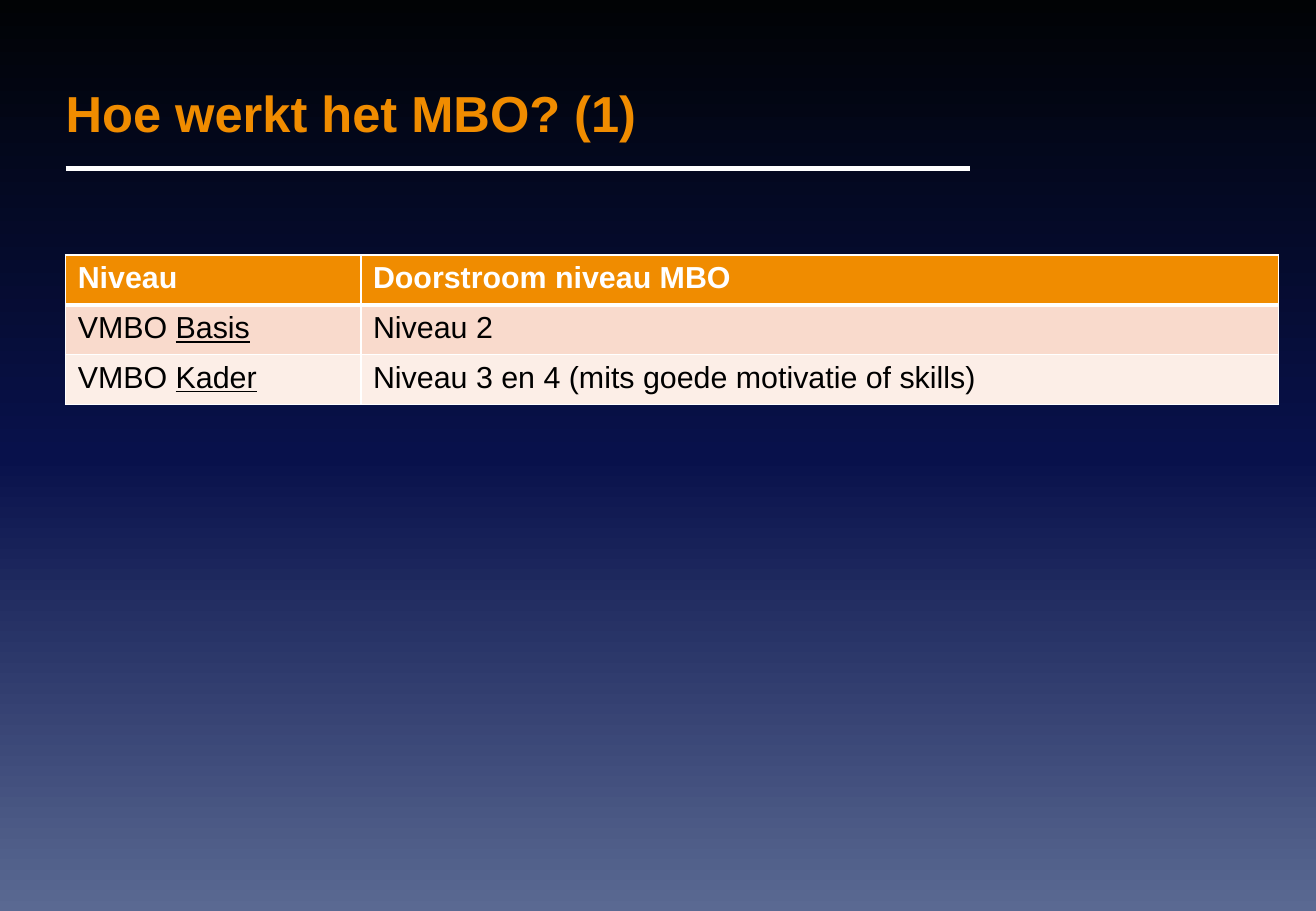
"""Build a slide on how VMBO levels lead on to MBO levels."""
from copy import deepcopy
from dataclasses import dataclass

from lxml import etree
from pptx import Presentation
from pptx.dml.color import RGBColor
from pptx.enum.shapes import MSO_CONNECTOR
from pptx.enum.text import MSO_ANCHOR, MSO_AUTO_SIZE, PP_ALIGN
from pptx.oxml.ns import qn
from pptx.util import Inches, Pt

STRAIGHT = MSO_CONNECTOR.STRAIGHT
MIDDLE = MSO_ANCHOR.MIDDLE
NO_AUTOFIT = MSO_AUTO_SIZE.NONE
LEFT = PP_ALIGN.LEFT


@dataclass(frozen=True)
class Theme:
    font: str = "Arial"
    title_size: int = 30
    table_size: int = 18
    accent: str = "F08C00"
    white: str = "FFFFFF"
    black: str = "000000"
    bands: tuple = ("F9DACC", "FCEEE7")
    backdrop: tuple = ((0, "010305"), (0.5, "08114B"), (1, "5A6992"))


THEME = Theme()


def add_run(paragraph, text, size, color, bold=False, underline=False):
    run = paragraph.add_run()
    run.text = text
    run.font.name = THEME.font
    run.font.size = Pt(size)
    run.font.bold = bold
    run.font.underline = underline
    run.font.color.rgb = RGBColor.from_string(color)


def add_border(cell, side, width):
    border = etree.SubElement(cell._tc.get_or_add_tcPr(), qn(f"a:ln{side}"), w=str(Pt(width)))
    solid = etree.SubElement(border, qn("a:solidFill"))
    etree.SubElement(solid, qn("a:srgbClr"), val=THEME.white)


deck = Presentation()
deck.slide_width = Inches(10.83)
deck.slide_height = Inches(7.5)
slide = deck.slides.add_slide(deck.slide_layouts[5])

backdrop = slide.background.fill
backdrop.gradient()
backdrop.gradient_angle = 270
stop_list = slide.element.find(".//" + qn("a:gsLst"))
stop_list.append(deepcopy(stop_list[-1]))
for stop, (position, color) in zip(backdrop.gradient_stops, THEME.backdrop):
    stop.position = position
    stop.color.rgb = RGBColor.from_string(color)

title_rule = slide.shapes.add_connector(
    STRAIGHT, Inches(0.54), Inches(1.39), Inches(7.98), Inches(1.39))
title_rule.line.color.rgb = RGBColor.from_string(THEME.white)
title_rule.line.width = Pt(3)
etree.SubElement(title_rule._element.spPr, qn("a:effectLst"))

title = slide.shapes.title
title.left, title.top = Inches(0.54), Inches(0.54)
title.width, title.height = Inches(7.43), Inches(0.77)
title_frame = title.text_frame
title_frame.auto_size = NO_AUTOFIT
title_frame.word_wrap = True
title_frame.vertical_anchor = MIDDLE
title_frame.margin_left = title_frame.margin_right = 0
title_frame.paragraphs[0].alignment = LEFT
add_run(title_frame.paragraphs[0], "Hoe werkt het MBO? (1)",
        THEME.title_size, THEME.accent, bold=True)

levels = [
    (["Niveau"], ["Doorstroom niveau MBO"]),
    (["VMBO ", "Basis"], ["Niveau 2"]),
    (["VMBO ", "Kader"], ["Niveau 3 en 4 (mits goede motivatie of skills)"]),
]
column_widths = (2.43, 7.55)
row_height = 0.41
level_table = slide.shapes.add_table(
    len(levels), len(column_widths), Inches(0.54), Inches(2.1),
    Inches(sum(column_widths)), Inches(row_height * len(levels))).table
for column, width in zip(level_table.columns, column_widths):
    column.width = Inches(width)

for row_index, level in enumerate(levels):
    is_header = row_index == 0
    level_table.rows[row_index].height = Inches(row_height)
    fill_color = THEME.accent if is_header else THEME.bands[row_index - 1]
    text_color = THEME.white if is_header else THEME.black
    for column_index, parts in enumerate(level):
        cell = level_table.cell(row_index, column_index)
        for side in "LRTB":
            header_edge = (row_index, side) in ((0, "B"), (1, "T"))
            add_border(cell, side, 3 if header_edge else 1)
        cell.fill.solid()
        cell.fill.fore_color.rgb = RGBColor.from_string(fill_color)
        for part_index, part in enumerate(parts):
            add_run(cell.text_frame.paragraphs[0], part, THEME.table_size,
                    text_color, bold=is_header, underline=part_index == 1)

deck.save("out.pptx")
